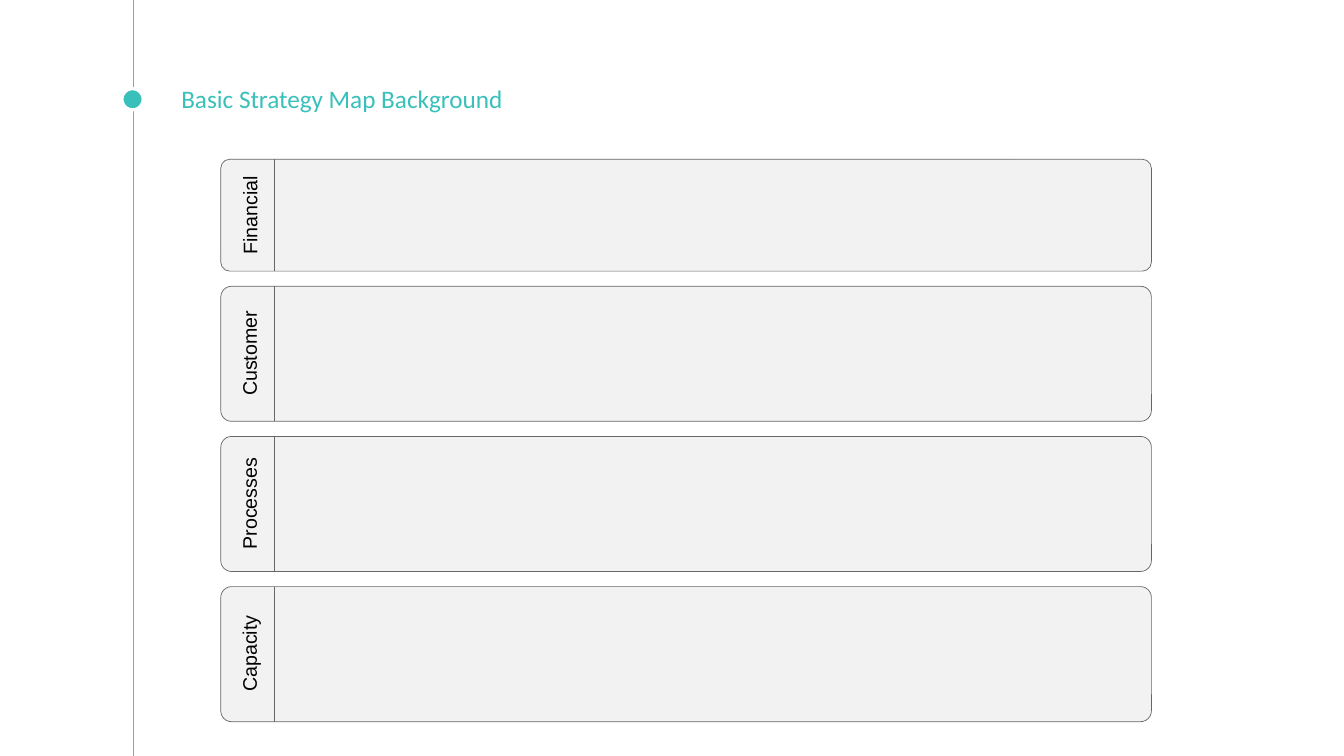
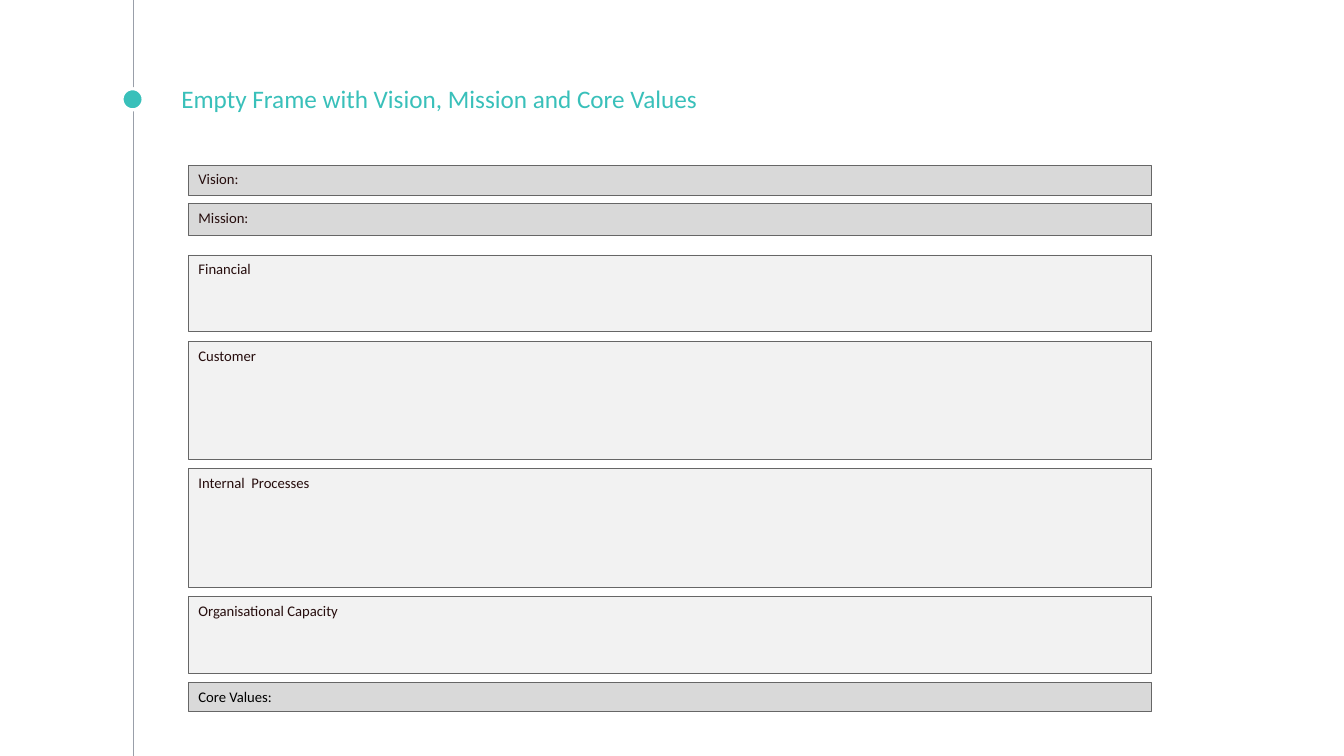
from lxml import etree
from pptx import Presentation
from pptx.dml.color import RGBColor
from pptx.enum import shapes, text
from pptx.oxml import ns
from pptx.util import Pt

PX = 9144  # 100 px to the inch
TEAL = RGBColor(0x39, 0xC0, 0xBA)
RAIL_GREY = RGBColor(0x99, 0x9F, 0xA9)
BORDER = RGBColor(0x66, 0x66, 0x66)
LIGHT = RGBColor(0xF2, 0xF2, 0xF2)
MID = RGBColor(0xD9, 0xD9, 0xD9)
WHITE = RGBColor(0xFF, 0xFF, 0xFF)
BLACK = RGBColor(0, 0, 0)
DARK = RGBColor(0x26, 0x0D, 0x0D)


def add_box(slide, kind, bounds, fill=None, line=BORDER, weight=0.5, words="",
            size=10.5, font="Calibri", color=DARK, anchor=text.MSO_ANCHOR.TOP):
    """Add a filled shape, or a text box when kind is None, with one style of text."""
    bounds = [px * PX for px in bounds]
    if kind is None:
        box = slide.shapes.add_textbox(*bounds)
    else:
        box = slide.shapes.add_shape(kind, *bounds)
        box.shadow.inherit = False
        box.fill.solid()
        box.fill.fore_color.rgb = fill
        box.line.color.rgb = line
        box.line.width = Pt(weight)
    frame = box.text_frame
    frame.word_wrap = True
    frame.vertical_anchor = anchor
    if words:
        frame.text = words
        paragraph = frame.paragraphs[0]
        paragraph.alignment = text.PP_ALIGN.LEFT
        run_font = paragraph.runs[0].font
        run_font.size, run_font.name = Pt(size), font
        run_font.color.rgb = color
    return box


def add_vertical(slide, x, top, bottom, color, weight):
    rule = slide.shapes.add_connector(
        shapes.MSO_CONNECTOR.STRAIGHT, x * PX, top * PX, x * PX, bottom * PX)
    rule.line.color.rgb = color
    rule.line.width = Pt(weight)
    etree.SubElement(rule._element.spPr, ns.qn("a:effectLst"))


deck = Presentation()
deck.slide_width, deck.slide_height = 1333 * PX, 750 * PX

slides = []
for heading in ("Basic Strategy Map Background",
                "Empty Frame with Vision, Mission and Core Values"):
    slide = deck.slides.add_slide(deck.slide_layouts[6])
    add_vertical(slide, 132, 0, 750, RAIL_GREY, 0.75)
    add_box(slide, shapes.MSO_SHAPE.OVAL, (121, 88, 21, 21), TEAL, WHITE, 2.25)
    title = add_box(slide, None, (170, 73, 1000, 50), words=heading, size=18,
                    color=TEAL, anchor=text.MSO_ANCHOR.BOTTOM)
    title.text_frame.margin_top = title.text_frame.margin_bottom = 10 * PX
    slides.append(slide)
strategy_map, empty_frame = slides

# Strategy map: four perspectives, each with a turned label in its left column
LANE_GAP = 15
LABEL_CENTER, LABEL_HEIGHT = 248, 35
lane_top = 158
for perspective, lane_height in (("Financial", 111), ("Customer", 134),
                                 ("Processes", 134), ("Capacity", 134)):
    lane = add_box(strategy_map, shapes.MSO_SHAPE.ROUNDED_RECTANGLE,
                   (219, lane_top, 923, lane_height), LIGHT)
    lane.adjustments[0] = 0.08
    add_vertical(strategy_map, 272, lane_top, lane_top + lane_height, BORDER, 0.5)
    label = add_box(strategy_map, None,
                    (LABEL_CENTER - lane_height // 2,
                     lane_top + (lane_height - LABEL_HEIGHT) // 2,
                     lane_height, LABEL_HEIGHT),
                    words=perspective, size=14, font="Arial", color=BLACK)
    label.text_frame.paragraphs[0].alignment = text.PP_ALIGN.CENTER
    label.rotation = 270
    lane_top += lane_height + LANE_GAP

# Empty frame: statements in mid grey around the light perspectives
for section, top, height, fill in (
        ("Vision:", 164, 30, MID),
        ("Mission:", 202, 32, MID),
        ("Financial", 253, 76, LIGHT),
        ("Customer", 339, 117, LIGHT),
        ("Internal  Processes", 465, 118, LIGHT),
        ("Organisational Capacity", 592, 76, LIGHT)):
    add_box(empty_frame, shapes.MSO_SHAPE.RECTANGLE, (187, top, 955, height),
            fill, words=section)
core_values = add_box(empty_frame, shapes.MSO_SHAPE.RECTANGLE, (187, 677, 955, 29),
                      MID, weight=1, words="Core Values:", color=BLACK,
                      anchor=text.MSO_ANCHOR.MIDDLE)
core_values.text_frame.margin_top = core_values.text_frame.margin_bottom = 0

deck.save("out.pptx")
